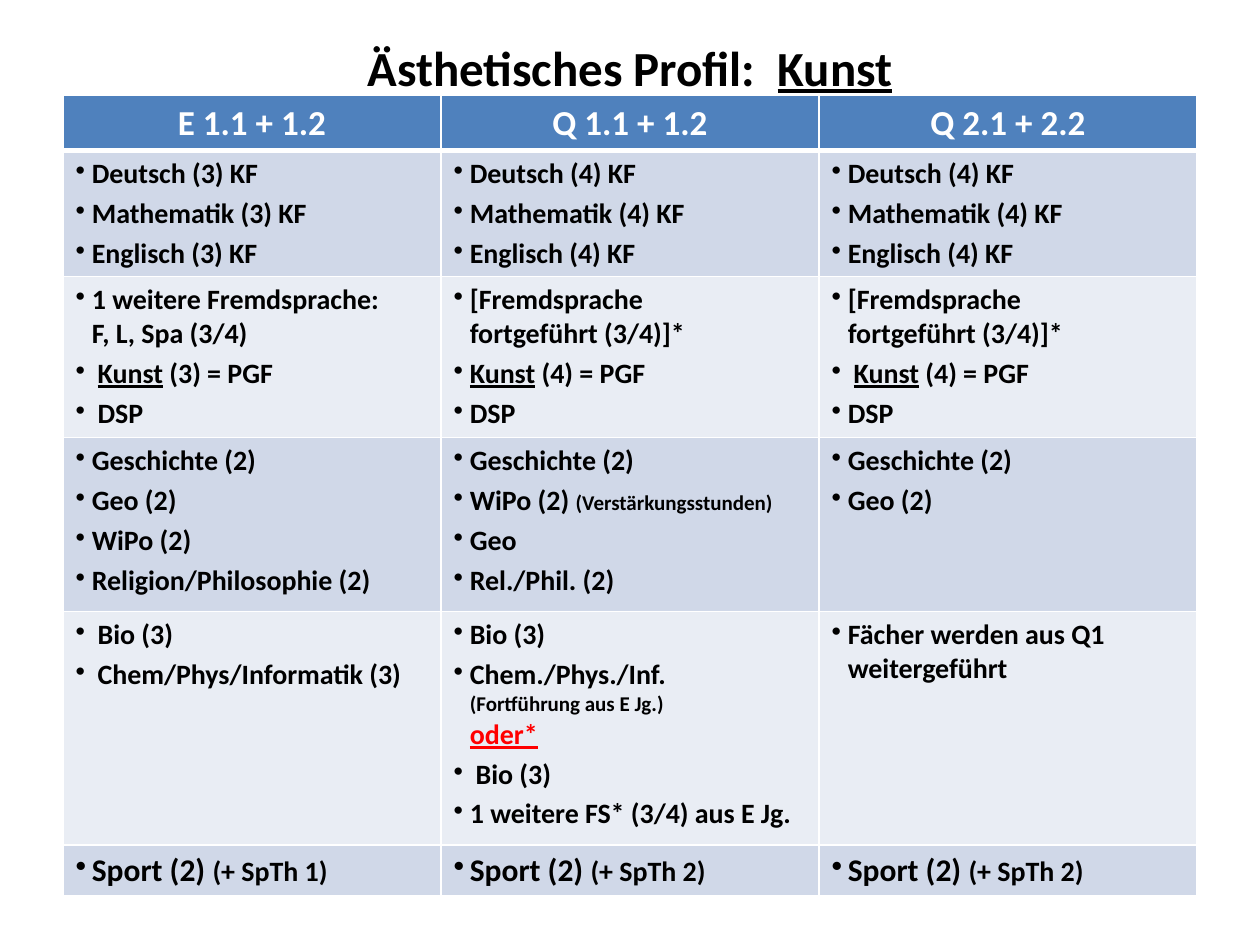
from dataclasses import dataclass

from lxml import etree
from pptx import Presentation
from pptx.dml.color import RGBColor
from pptx.enum.text import MSO_ANCHOR, PP_ALIGN
from pptx.oxml.ns import qn
from pptx.util import Pt

CENTER = PP_ALIGN.CENTER
MIDDLE = MSO_ANCHOR.MIDDLE
BLACK = RGBColor(0x00, 0x00, 0x00)
WHITE = RGBColor(0xFF, 0xFF, 0xFF)
RED = RGBColor(0xFF, 0x00, 0x00)
HEADER_BLUE = RGBColor(0x4F, 0x81, 0xBD)
BAND_DARK = RGBColor(0xD0, 0xD8, 0xE8)
BAND_LIGHT = RGBColor(0xE9, 0xED, 0xF4)
NARROW, WIDE = 9.3, 12.6


@dataclass
class Piece:
    text: str
    size: float = None
    color: RGBColor = None
    underline: bool = None


@dataclass
class Bullet:
    pieces: list
    size: float = 16
    indent: float = NARROW


BREAK = Piece("\n")
KUNST = Piece("Kunst", underline=True)


def bullets(*texts, indent=NARROW):
    return [Bullet([Piece(text)], indent=indent) for text in texts]


def core_subjects(hours):
    return bullets(*(f"{name} ({hours}) KF" for name in ("Deutsch", "Mathematik", "Englisch")))


def two_lines(first, second):
    return Bullet([Piece(first), BREAK, Piece(second)])


def art(hours, indent):
    return Bullet([KUNST, Piece(f" ({hours}) = PGF")], indent=indent)


def sport(therapy):
    return [Bullet([Piece("Sport (2) "), Piece(f"(+ SpTh {therapy})", size=16)], size=18)]


HEADERS = ["E 1.1 + 1.2", "Q 1.1 + 1.2", "Q 2.1 + 2.2"]
ROW_HEIGHTS = [31.4, 72, 92, 99.4, 133.4, 29]
CONTINUED = two_lines("[Fremdsprache", "fortgeführt (3/4)]*")
BODY = [
    [core_subjects(3), core_subjects(4), core_subjects(4)],
    [
        [two_lines("1 weitere Fremdsprache:", "F, L, Spa (3/4)"), art(3, WIDE), *bullets("DSP", indent=WIDE)],
        [CONTINUED, art(4, NARROW), *bullets("DSP")],
        [CONTINUED, art(4, WIDE), *bullets("DSP")],
    ],
    [
        bullets("Geschichte (2)", "Geo (2)", "WiPo (2)", "Religion/Philosophie (2)"),
        [
            *bullets("Geschichte (2)"),
            Bullet([Piece("WiPo (2) "), Piece("(Verstärkungsstunden)", size=12)]),
            *bullets("Geo", "Rel./Phil. (2)"),
        ],
        bullets("Geschichte (2)", "Geo (2)"),
    ],
    [
        bullets("Bio (3)", "Chem/Phys/Informatik (3)", indent=WIDE),
        [
            *bullets("Bio (3)"),
            Bullet([
                Piece("Chem./Phys./Inf."), BREAK,
                Piece("(Fortführung aus E Jg.)", size=12), BREAK,
                Piece("oder*", color=RED, underline=True),
            ]),
            *bullets("Bio (3)", indent=WIDE),
            *bullets("1 weitere FS* (3/4) aus E Jg."),
        ],
        [two_lines("Fächer werden aus Q1", "weitergeführt")],
    ],
    [sport(1), sport(2), sport(2)],
]


class ProfileSlide:
    font_name = "Calibri"

    def __init__(self, presentation):
        self.slide = presentation.slides.add_slide(presentation.slide_layouts[6])

    def add_pieces(self, paragraph, pieces, size, color):
        font = paragraph.font
        font.name, font.size, font.bold = self.font_name, Pt(size), True
        font.color.rgb = color
        for piece in pieces:
            if piece is BREAK:
                paragraph.add_line_break()
                continue
            run = paragraph.add_run()
            run.text = piece.text
            if piece.size:
                run.font.size = Pt(piece.size)
            if piece.color:
                run.font.color.rgb = piece.color
            if piece.underline:
                run.font.underline = True

    def title(self, pieces, left, top, width, height):
        frame = self.slide.shapes.add_textbox(Pt(left), Pt(top), Pt(width), Pt(height)).text_frame
        frame.word_wrap = True
        frame.vertical_anchor = MIDDLE
        frame.margin_top = frame.margin_bottom = 0
        paragraph = frame.paragraphs[0]
        paragraph.alignment = CENTER
        self.add_pieces(paragraph, pieces, 28, BLACK)

    def bullet(self, paragraph, bullet):
        properties = paragraph._p.get_or_add_pPr()
        properties.set("marL", str(Pt(bullet.indent)))
        properties.set("indent", str(-Pt(bullet.indent)))
        etree.SubElement(properties, qn("a:buChar")).set("char", "•")
        paragraph.space_before = Pt(bullet.size * 0.2)
        self.add_pieces(paragraph, bullet.pieces, bullet.size, BLACK)

    def cell_look(self, cell, fill, top=1, bottom=1):
        properties = cell._tc.get_or_add_tcPr()
        for side, width in (("L", 1), ("R", 1), ("T", top), ("B", bottom)):
            line = etree.SubElement(properties, qn(f"a:ln{side}"))
            line.set("w", str(Pt(width)))
            solid = etree.SubElement(line, qn("a:solidFill"))
            etree.SubElement(solid, qn("a:srgbClr")).set("val", str(WHITE))
        cell.fill.solid()
        cell.fill.fore_color.rgb = fill

    def table(self, headers, body, heights, left, top, width):
        table = self.slide.shapes.add_table(
            len(heights), len(headers), Pt(left), Pt(top), Pt(width), Pt(sum(heights))
        ).table
        for row, height in zip(table.rows, heights):
            row.height = Pt(height)
        for column, header in enumerate(headers):
            cell = table.cell(0, column)
            self.cell_look(cell, HEADER_BLUE, bottom=3)
            paragraph = cell.text_frame.paragraphs[0]
            paragraph.alignment = CENTER
            paragraph.space_before = Pt(4)
            self.add_pieces(paragraph, [Piece(header)], 20, WHITE)
        for row, contents in enumerate(body, start=1):
            for column, items in enumerate(contents):
                cell = table.cell(row, column)
                self.cell_look(cell, BAND_DARK if row % 2 else BAND_LIGHT, top=3 if row == 1 else 1)
                frame = cell.text_frame
                for index, item in enumerate(items):
                    paragraph = frame.add_paragraph() if index else frame.paragraphs[0]
                    self.bullet(paragraph, item)


def main():
    presentation = Presentation()
    presentation.slide_width, presentation.slide_height = Pt(720), Pt(540)
    profile = ProfileSlide(presentation)
    profile.title([Piece("Ästhetisches Profil:  "), KUNST], 36, 21.6, 648, 33)
    profile.table(HEADERS, BODY, ROW_HEIGHTS, 36, 54.7, 648)
    presentation.save("out.pptx")


if __name__ == "__main__":
    main()
